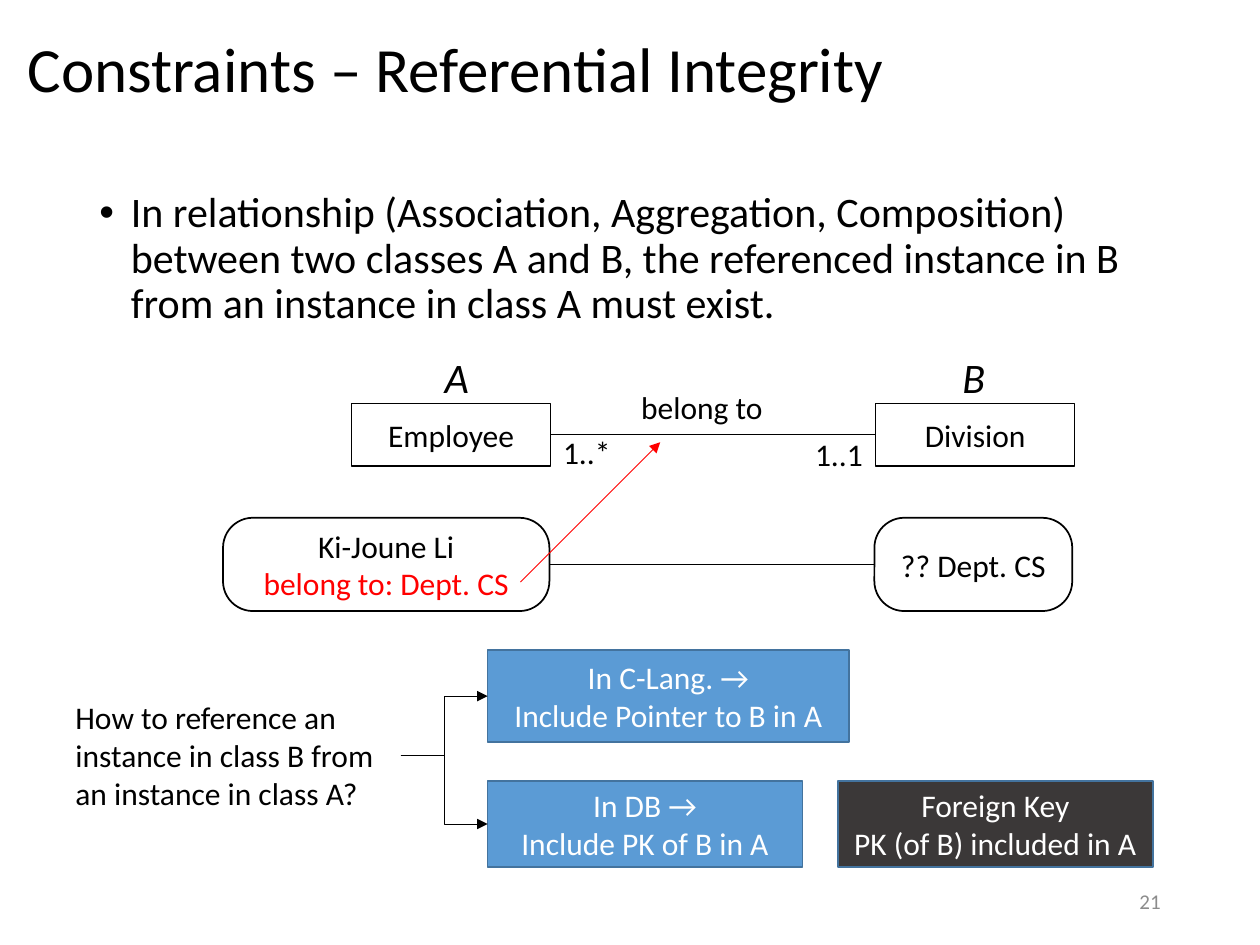
from lxml import etree
from pptx import Presentation
from pptx.dml.color import RGBColor
from pptx.enum.shapes import MSO_CONNECTOR, MSO_SHAPE
from pptx.enum.text import MSO_ANCHOR, PP_ALIGN
from pptx.oxml.ns import qn
from pptx.util import Pt

PX = 9144  # EMU per px, 100 px to the inch
FONT = "Calibri"
COLORS = {
    "ink": "000000",
    "paper": "FFFFFF",
    "accent": "FF0000",
    "blue": "5B9BD5",
    "blue_edge": "43739E",
    "dark": "3B3838",
    "muted": "8C8C8C",
}
RECT, ROUNDED = MSO_SHAPE.RECTANGLE, MSO_SHAPE.ROUNDED_RECTANGLE
STRAIGHT, ELBOW = MSO_CONNECTOR.STRAIGHT, MSO_CONNECTOR.ELBOW
LEFT, CENTER, RIGHT = PP_ALIGN.LEFT, PP_ALIGN.CENTER, PP_ALIGN.RIGHT
TOP, MIDDLE = MSO_ANCHOR.TOP, MSO_ANCHOR.MIDDLE
LEFT_SIDE, RIGHT_SIDE = 1, 3


def rgb(name):
    return RGBColor.from_string(COLORS[name])


def emu(*lengths):
    return [length * PX for length in lengths]


def write(shape, lines, size=18, colors=("ink",), align=LEFT, anchor=TOP,
          wrap=True, italic=None):
    """Set one paragraph per line; the last colour serves any further lines."""
    frame = shape.text_frame
    frame.word_wrap = wrap
    frame.vertical_anchor = anchor
    frame.text = "\n".join(lines)
    for i, paragraph in enumerate(frame.paragraphs):
        paragraph.alignment = align
        font = paragraph.font
        font.name, font.size, font.italic = FONT, Pt(size), italic
        font.color.rgb = rgb(colors[min(i, len(colors) - 1)])


def add_text(slide, box, text, **style):
    label = slide.shapes.add_textbox(*emu(*box))
    write(label, [text], **style)
    return label


def add_node(slide, box, lines, kind=RECT, fill=None, edge="ink", weight=1, **style):
    node = slide.shapes.add_shape(kind, *emu(*box))
    node.shadow.inherit = False
    if fill:
        node.fill.solid()
        node.fill.fore_color.rgb = rgb(fill)
    else:
        node.fill.background()
    node.line.color.rgb = rgb(edge)
    node.line.width = Pt(weight)
    if kind == ROUNDED:
        node.adjustments[0] = 0.32
    write(node, lines, align=CENTER, anchor=MIDDLE, **style)
    return node


def add_line(slide, kind=STRAIGHT, ends=(0, 0, 0, 0), color="ink", arrow=False):
    line = slide.shapes.add_connector(kind, *emu(*ends))
    line.line.color.rgb = rgb(color)
    line.line.width = Pt(0.5)
    if arrow:
        etree.SubElement(line.line._get_or_add_ln(), qn("a:tailEnd"), type="triangle")
    etree.SubElement(line._element.spPr, qn("a:effectLst"))
    return line


def join(slide, source, target, **style):
    """Connect the right side of source to the left side of target."""
    line = add_line(slide, **style)
    line.begin_connect(source, RIGHT_SIDE)
    line.end_connect(target, LEFT_SIDE)


def add_title(slide, box):
    title = add_text(slide, box, "Constraints – Referential Integrity", size=36, anchor=MIDDLE)
    title.text_frame.paragraphs[0].line_spacing = 0.9


def add_definition(slide, box):
    body = add_text(
        slide, box,
        "In relationship (Association, Aggregation, Composition) between two classes "
        "A and B, the referenced instance in B from an instance in class A must exist.",
        size=24)
    paragraph = body.text_frame.paragraphs[0]
    paragraph.line_spacing = 0.9
    paragraph.space_before = Pt(10)
    properties = paragraph._p.get_or_add_pPr()
    properties.set("marL", str(25 * PX))
    properties.set("indent", str(-25 * PX))
    bullet_font = etree.Element(qn("a:buFont"), typeface="Arial")
    bullet = etree.Element(qn("a:buChar"), char="•")
    properties.find(qn("a:spcBef")).addnext(bullet_font)
    bullet_font.addnext(bullet)


def add_class_diagram(slide, left, top):
    """Two classes with their association, above one instance of each."""
    classes = []
    for letter, name, x, letter_x in (("A", "Employee", 102, 166),
                                      ("B", "Division", 518, 577)):
        classes.append(add_node(slide, (left + x, top + 46, 158, 50), [name],
                                weight=0.75, wrap=False))
        add_text(slide, (left + letter_x, top, 40, 50), letter,
                 size=24, italic=True, wrap=False)
    join(slide, *classes)

    for text, x, y, width in (("belong to", 322, 29, 118),
                              ("1..1", 460, 66, 58),
                              ("1..*", 260, 65, 58)):
        add_text(slide, (left + x, top + y, width, 40), text, wrap=False)

    employee = add_node(slide, (left, top + 137, 259, 74),
                        ["Ki-Joune Li", "belong to: Dept. CS"],
                        kind=ROUNDED, fill="paper", colors=("ink", "accent"))
    division = add_node(slide, (left + 517, top + 137, 157, 74), ["?? Dept. CS"],
                        kind=ROUNDED, fill="paper")
    join(slide, employee, division)
    add_line(slide, ends=(left + 236, top + 188, left + 347, top + 77),
             color="accent", arrow=True)


def add_reference_options(slide, left, top):
    """The question, its two answers and the note on foreign keys."""
    question = add_text(slide, (left, top + 33, 268, 101),
                        "How to reference an instance in class B from an instance in class A?")
    boxes = []
    for x, y, width, height, fill, lines in (
            (337, 0, 287, 73, "blue", ["In C-Lang. →", "Include Pointer to B in A"]),
            (337, 104, 250, 68, "blue", ["In DB →", "Include PK of B in A"]),
            (615, 104, 250, 68, "dark", ["Foreign Key", "PK (of B) included in A"])):
        boxes.append(add_node(slide, (left + x, top + y, width, height), lines,
                              fill=fill, edge="blue_edge", colors=("paper",)))
    for answer in boxes[:2]:
        join(slide, question, answer, kind=ELBOW, arrow=True)


def main():
    deck = Presentation()
    deck.slide_width, deck.slide_height = emu(1000, 750)
    slide = deck.slides.add_slide(deck.slide_layouts[6])
    add_title(slide, (12, 8, 976, 99))
    add_definition(slide, (69, 147, 862, 529))
    add_class_diagram(slide, 177, 274)
    add_reference_options(slide, 50, 516)
    add_text(slide, (706, 695, 225, 40), "21", size=12, colors=("muted",),
             align=RIGHT, anchor=MIDDLE)
    deck.save("out.pptx")


if __name__ == "__main__":
    main()
